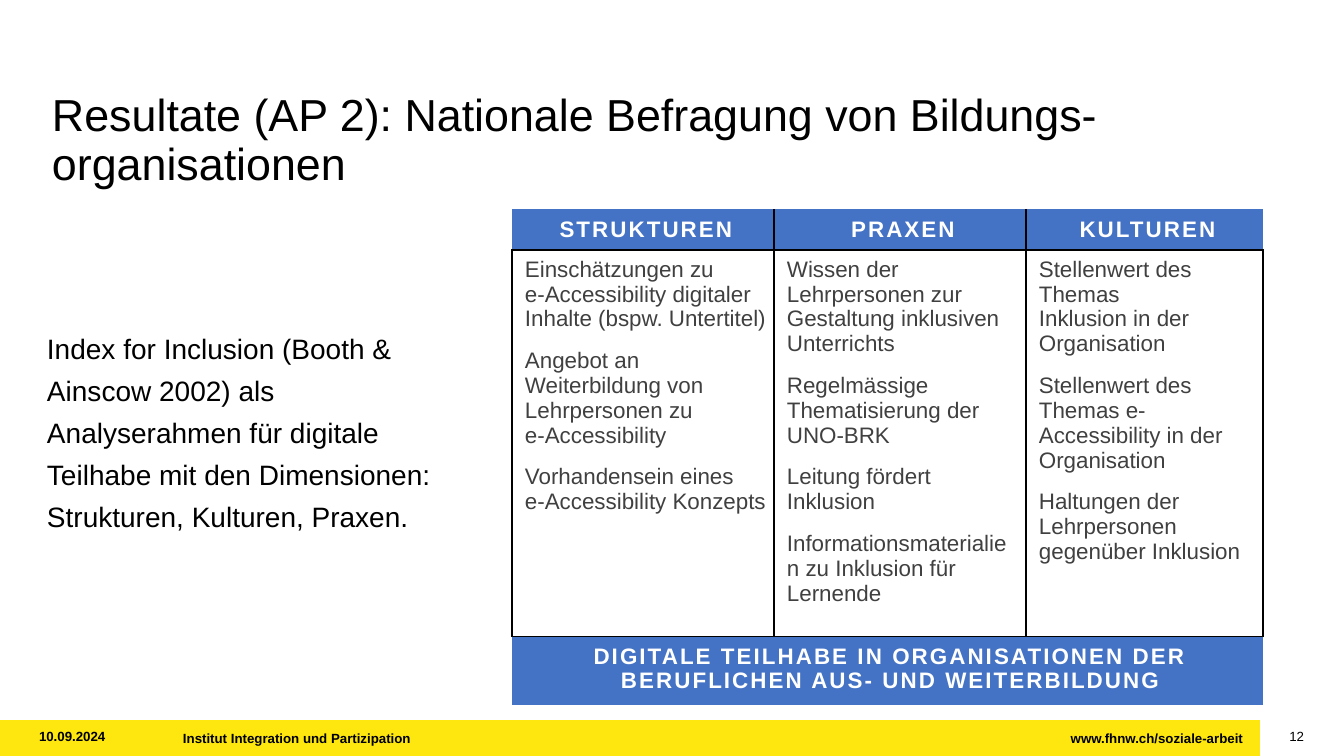
"""Build the slide on the national survey of educational organisations."""
import pptx
import pptx.dml.color
import pptx.enum.shapes
import pptx.enum.text
import pptx.oxml
import pptx.oxml.ns
import pptx.util

PX = 914400 / 100.8
BLACK = pptx.dml.color.RGBColor(0x00, 0x00, 0x00)
WHITE = pptx.dml.color.RGBColor(0xFF, 0xFF, 0xFF)
GREY = pptx.dml.color.RGBColor(0x40, 0x40, 0x40)
BLUE = pptx.dml.color.RGBColor(0x44, 0x72, 0xC4)
YELLOW = pptx.dml.color.RGBColor(0xFD, 0xE7, 0x0E)
ALIGN = pptx.enum.text.PP_ALIGN
ANCHOR = pptx.enum.text.MSO_ANCHOR


def emu(*lengths):
    return [pptx.util.Emu(round(length * PX)) for length in lengths]


def style(paragraph, size, color, bold=False, align=ALIGN.LEFT):
    paragraph.alignment = align
    paragraph.font.name = "Arial"
    paragraph.font.size = pptx.util.Pt(size)
    paragraph.font.bold = bold
    paragraph.font.color.rgb = color


presentation = pptx.Presentation()
presentation.slide_width, presentation.slide_height = emu(1344, 756)
slide = presentation.slides.add_slide(presentation.slide_layouts[1])

bar = slide.shapes.add_shape(
    pptx.enum.shapes.MSO_SHAPE.RECTANGLE, *emu(0, 720, 1260, 36))
bar.shadow.inherit = False
bar.fill.solid()
bar.fill.fore_color.rgb = YELLOW
bar.line.fill.background()

PLACEHOLDERS = [
    (slide.shapes.title, (52, 93, 1214, 54), 32, 0.9, 0,
     "Resultate (AP 2): Nationale Befragung von Bildungs-organisationen"),
    (slide.placeholders[1], (47, 323, 405, 397), 20, 1.25, 6,
     "Index for Inclusion (Booth & Ainscow 2002) als Analyserahmen für digitale "
     "Teilhabe mit den Dimensionen: Strukturen, Kulturen, Praxen."),
]
for shape, place, size, line_spacing, space_after, text in PLACEHOLDERS:
    shape.left, shape.top, shape.width, shape.height = emu(*place)
    frame = shape.text_frame
    frame.text = text
    frame.word_wrap = True
    frame.auto_size = pptx.enum.text.MSO_AUTO_SIZE.NONE
    frame.vertical_anchor = ANCHOR.TOP
    frame.margin_left = frame.margin_top = frame.margin_right = frame.margin_bottom = 0
    paragraph = frame.paragraphs[0]
    properties = paragraph._p.get_or_add_pPr()
    properties.set("marL", "0")
    properties.set("indent", "0")
    properties.append(pptx.oxml.parse_xml(
        f"<a:buNone {pptx.oxml.ns.nsdecls('a')}/>"))
    paragraph.line_spacing = line_spacing
    paragraph.space_before = pptx.util.Pt(0)
    paragraph.space_after = pptx.util.Pt(space_after)
    style(paragraph, size, BLACK)

FOOTERS = [
    ("10.09.2024", (39, 730, 131, 16), 0.9, True, ALIGN.LEFT),
    ("Institut Integration und Partizipation", (183, 730, 869, 16), 1, True, ALIGN.LEFT),
    ("www.fhnw.ch/soziale-arbeit", (1053, 730, 190, 16), 1, True, ALIGN.RIGHT),
    ("12", (1263, 730, 41, 16), 0.9, False, ALIGN.RIGHT),
]
for text, place, line_spacing, bold, align in FOOTERS:
    frame = slide.shapes.add_textbox(*emu(*place)).text_frame
    frame.text = text
    frame.word_wrap = True
    frame.margin_left = frame.margin_top = frame.margin_right = frame.margin_bottom = 0
    frame.paragraphs[0].line_spacing = line_spacing
    style(frame.paragraphs[0], 9.5, BLACK, bold, align)

DIMENSIONS = [
    ("STRUKTUREN", 262, [
        "Einschätzungen zu\ve-Accessibility digitaler Inhalte (bspw. Untertitel)",
        "Angebot an Weiterbildung von Lehrpersonen zu\ve-Accessibility",
        "Vorhandensein eines\ve-Accessibility Konzepts"]),
    ("PRAXEN", 252, [
        "Wissen der Lehrpersonen zur Gestaltung inklusiven\vUnterrichts",
        "Regelmässige Thematisierung der UNO-BRK",
        "Leitung fördert Inklusion",
        "Informationsmaterialien zu Inklusion für Lernende"]),
    ("KULTUREN", 237, [
        "Stellenwert des Themas\vInklusion in der Organisation",
        "Stellenwert des Themas e-Accessibility in der Organisation",
        "Haltungen der Lehrpersonen gegenüber Inklusion"]),
]
CONCLUSION = "DIGITALE TEILHABE IN ORGANISATIONEN DER BERUFLICHEN AUS- UND WEITERBILDUNG"
ROW_HEIGHTS = [41, 363, 68]

table = slide.shapes.add_table(3, 3, *emu(512, 209, 751, sum(ROW_HEIGHTS))).table
table.first_row = table.horz_banding = False
for row, height in zip(table.rows, emu(*ROW_HEIGHTS)):
    row.height = height
for column, (heading, width, points) in enumerate(DIMENSIONS):
    table.columns[column].width = emu(width)[0]
    conclusion = [CONCLUSION] if column == 0 else []
    for row, texts in enumerate([[heading], points, conclusion]):
        cell = table.cell(row, column)
        is_body = row == 1
        cell.margin_left, cell.margin_top, cell.margin_right, cell.margin_bottom = emu(13, 7, 7, 7)
        cell.vertical_anchor = ANCHOR.MIDDLE if row == 0 else ANCHOR.TOP
        cell.fill.solid()
        cell.fill.fore_color.rgb = WHITE if is_body else BLUE
        for number, text in enumerate(texts):
            frame = cell.text_frame
            paragraph = frame.add_paragraph() if number else frame.paragraphs[0]
            paragraph.text = text
            if is_body:
                paragraph.space_before = pptx.util.Pt(6 if number else 0)
                paragraph.space_after = pptx.util.Pt(6)
                style(paragraph, 16, GREY)
            else:
                style(paragraph, 16, WHITE, True, ALIGN.CENTER)
                paragraph.runs[0]._r.get_or_add_rPr().set("spc", "150")
        drawn = {
            "L": is_body or (row == 0 and column > 0),
            "R": is_body or (row == 0 and column < 2),
            "T": row > 0,
            "B": row < 2,
        }
        for position, (side, visible) in enumerate(drawn.items()):
            paint = '<a:solidFill><a:srgbClr val="000000"/></a:solidFill>' if visible else "<a:noFill/>"
            cell._tc.get_or_add_tcPr().insert(position, pptx.oxml.parse_xml(
                f'<a:ln{side} {pptx.oxml.ns.nsdecls("a")} w="12700">{paint}</a:ln{side}>'))
table.cell(2, 0).merge(table.cell(2, 2))

presentation.save("out.pptx")
